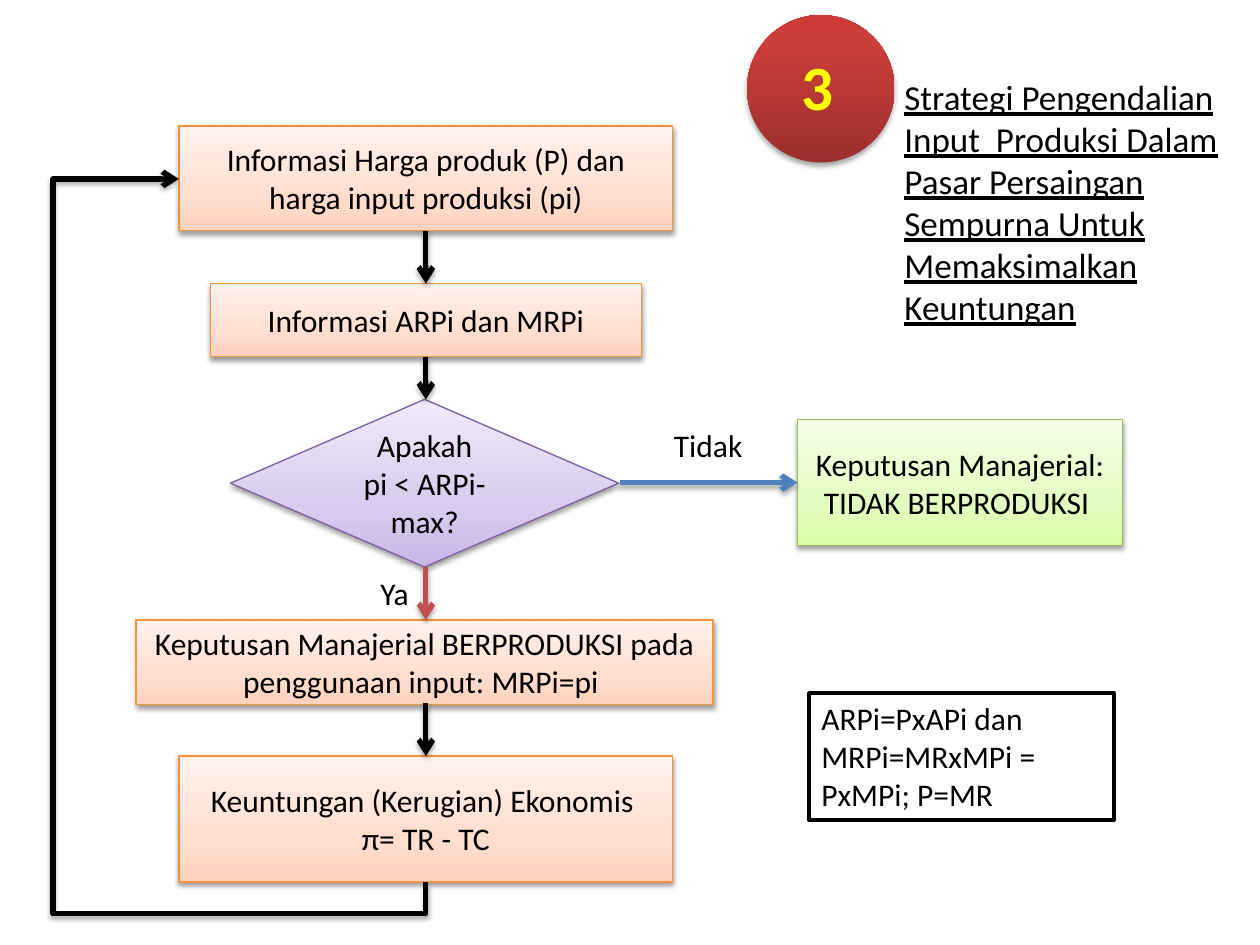
"""Build the flowchart slide on controlling production inputs to maximise profit."""
import copy

import lxml.etree
import pptx
import pptx.dml.color
import pptx.enum.shapes
import pptx.enum.text
import pptx.oxml.ns
import pptx.util

Inches = pptx.util.Inches
Pt = pptx.util.Pt
RGBColor = pptx.dml.color.RGBColor
Shape = pptx.enum.shapes.MSO_SHAPE
Connector = pptx.enum.shapes.MSO_CONNECTOR
Align = pptx.enum.text.PP_ALIGN
Anchor = pptx.enum.text.MSO_ANCHOR
qn = pptx.oxml.ns.qn

BLACK = RGBColor(0x00, 0x00, 0x00)
WHITE = RGBColor(0xFF, 0xFF, 0xFF)
YELLOW = RGBColor(0xFF, 0xFF, 0x00)
GOLD = RGBColor(0xFF, 0xC0, 0x00)
RED = RGBColor(0xC0, 0x50, 0x4D)
BLUE = RGBColor(0x4F, 0x81, 0xBD)
ORANGE = RGBColor(0xF6, 0x92, 0x40)
PURPLE = RGBColor(0x7D, 0x60, 0xA0)
GREEN = RGBColor(0x98, 0xB9, 0x55)
PEACH_SHADES = (RGBColor(0xFF, 0xD2, 0xBD), RGBColor(0xFF, 0xDE, 0xD0), RGBColor(0xFF, 0xF2, 0xED))
LILAC_SHADES = (RGBColor(0xC9, 0xB5, 0xE8), RGBColor(0xD8, 0xCB, 0xEE), RGBColor(0xF0, 0xEA, 0xF9))
LIME_SHADES = (RGBColor(0xDA, 0xFD, 0xA7), RGBColor(0xE4, 0xFC, 0xC2), RGBColor(0xF5, 0xFF, 0xE7))
RED_SHADES = (RGBColor(0x9C, 0x2F, 0x2D), RGBColor(0xCB, 0x3E, 0x3A), RGBColor(0xCE, 0x3B, 0x37))


class FlowPage:
    """Draws flowchart elements in one style on the current slide."""

    font = "Calibri"
    size = 18

    def __init__(self, page):
        self.page = page

    def put_text(self, shape, text, size=None, color=BLACK, align=Align.LEFT, wrap=True):
        """Put text in a shape and return its runs."""
        frame = shape.text_frame
        frame.text = text
        frame.word_wrap = wrap
        spans = []
        for para in frame.paragraphs:
            para.alignment = align
            spans.extend(para.runs)
        for span in spans:
            span.font.name = self.font
            span.font.size = Pt(size or self.size)
            span.font.color.rgb = color
        return spans

    def shadow(self, element, opacity, blur=3.1, distance=1.8):
        """Give a shape or connector a soft shadow straight below it."""
        properties = element.spPr
        effects = properties.find(qn("a:effectLst"))
        if effects is None:
            effects = lxml.etree.SubElement(properties, qn("a:effectLst"))
        outer = lxml.etree.SubElement(
            effects, qn("a:outerShdw"), blurRad=str(Pt(blur)), dist=str(Pt(distance)),
            dir="5400000", rotWithShape="0")
        tint = lxml.etree.SubElement(outer, qn("a:srgbClr"), val=str(BLACK))
        lxml.etree.SubElement(tint, qn("a:alpha"), val=str(opacity * 1000))

    def shade(self, shape, shades, middle):
        """Fill a shape with three shades from bottom to top."""
        fill = shape.fill
        fill.gradient()
        fill.gradient_angle = 90
        stops = shape.element.spPr.find(".//" + qn("a:gsLst"))
        stops.append(copy.deepcopy(stops[-1]))
        for stop, color, position in zip(fill.gradient_stops, shades, (0, middle, 1)):
            stop.color.rgb = color
            stop.position = position

    def node(self, left, top, width, height, text, shades=PEACH_SHADES, outline=ORANGE,
             kind=Shape.RECTANGLE):
        """Add a flowchart step."""
        shape = self.page.shapes.add_shape(
            kind, Inches(left), Inches(top), Inches(width), Inches(height))
        self.shade(shape, shades, 0.35)
        shape.line.color.rgb = outline
        shape.line.width = Pt(0.75)
        shape.shadow.inherit = False
        self.shadow(shape.element, 38, distance=1.6)
        shape.text_frame.vertical_anchor = Anchor.MIDDLE
        self.put_text(shape, text, align=Align.CENTER)

    def disc(self, left, top, diameter):
        """Add the shaded disc behind the number."""
        shape = self.page.shapes.add_shape(
            Shape.OVAL, Inches(left), Inches(top), Inches(diameter), Inches(diameter))
        self.shade(shape, RED_SHADES, 0.8)
        shape.line.fill.background()
        shape.shadow.inherit = False
        self.shadow(shape.element, 35)

    def label(self, left, top, width, height, text, **style):
        """Add a text box and return it with its runs."""
        box = self.page.shapes.add_textbox(
            Inches(left), Inches(top), Inches(width), Inches(height))
        spans = self.put_text(box, text, **style)
        box.text_frame.auto_size = pptx.enum.text.MSO_AUTO_SIZE.SHAPE_TO_FIT_TEXT
        return box, spans

    def arrow(self, start, end, color=BLACK, kind=Connector.STRAIGHT):
        """Add an arrow between two points."""
        link = self.page.shapes.add_connector(kind, *(Inches(value) for value in start + end))
        link.line.color.rgb = color
        link.line.width = Pt(3)
        stroke = link.element.spPr.find(qn("a:ln"))
        lxml.etree.SubElement(stroke, qn("a:tailEnd"), type="arrow")
        self.shadow(link.element, 35)
        return link

    def loop(self, start, end, bottom, side):
        """Add an arrow that runs below start, along a side and back to end."""
        (x1, y1), (x2, y2) = start, end
        middle_x, middle_y = (x1 + x2) / 2, (y1 + y2) / 2
        long, short = (y1 - y2) / 2, (x1 - x2) / 2
        link = self.arrow((middle_x + long, middle_y - short),
                          (middle_x - long, middle_y + short), kind=Connector.ELBOW)
        properties = link.element.spPr
        properties.find(qn("a:xfrm")).set("rot", "5400000")
        geometry = properties.find(qn("a:prstGeom"))
        geometry.set("prst", "bentConnector4")
        guides = geometry.find(qn("a:avLst"))
        if guides is None:
            guides = lxml.etree.SubElement(geometry, qn("a:avLst"))
        bends = ((y1 - bottom) / (y1 - y2), (x1 - side) / (x1 - x2))
        for number, bend in enumerate(bends, 1):
            lxml.etree.SubElement(guides, qn("a:gd"), name=f"adj{number}",
                                  fmla=f"val {round(bend * 100000)}")


def main():
    """Build and save the slide."""
    deck = pptx.Presentation()
    deck.slide_width, deck.slide_height = Inches(10), Inches(7.5)
    flow = FlowPage(deck.slides.add_slide(deck.slide_layouts[6]))

    flow.disc(5.93, 0.12, 1.17)
    title, spans = flow.label(
        7.08, 0.55, 2.76, 2.12, "Strategi Pengendalian Input  Produksi Dalam Pasar "
        "Persaingan Sempurna Untuk Memaksimalkan Keuntungan", size=20)
    spans[0].font.underline = True

    flow.node(1.42, 1, 3.92, 0.83, "Informasi Harga produk (P) dan harga input produksi (pi)")
    flow.node(1.67, 2.25, 3.42, 0.58, "Informasi ARPi dan MRPi")
    flow.node(1.83, 3.17, 3.08, 1.33, "Apakah\npi < ARPi-max?",
              LILAC_SHADES, PURPLE, Shape.DIAMOND)
    flow.node(1.08, 4.92, 4.58, 0.67,
              "Keputusan Manajerial BERPRODUKSI pada penggunaan input: MRPi=pi ")
    flow.node(1.42, 6, 3.92, 1, "Keuntungan (Kerugian) Ekonomis \nπ= TR - TC")
    flow.node(6.33, 3.33, 2.58, 1, "Keputusan Manajerial:\nTIDAK BERPRODUKSI ",
              LIME_SHADES, GREEN)

    flow.label(5.25, 3.33, 0.83, 0.4, "Tidak")
    flow.label(2.92, 4.51, 0.5, 0.4, "Ya")
    formula, spans = flow.label(6.42, 5.5, 2.42, 1.01,
                                "ARPi=PxAPi dan MRPi=MRxMPi = PxMPi; P=MR")
    formula.fill.solid()
    formula.fill.fore_color.rgb = WHITE
    formula.line.color.rgb = BLACK
    formula.line.width = Pt(2)

    axis = 3.38
    for top, bottom, color in ((1.83, 2.25, BLACK), (2.83, 3.17, BLACK),
                               (4.5, 4.92, RED), (5.58, 6, BLACK)):
        flow.arrow((axis, top), (axis, bottom), color)
    flow.arrow((4.92, 3.83), (6.33, 3.83), BLUE)
    flow.loop((axis, 7), (1.42, 1.42), bottom=7.25, side=0.42)

    number, spans = flow.label(6.26, 0.33, 0.46, 0.71, "3", size=36, color=YELLOW, wrap=False)
    spans[0].font.bold = True
    properties = number.element.find(".//" + qn("a:rPr"))
    properties.set("spc", "50")
    outline = lxml.etree.Element(qn("a:ln"), w=str(Pt(0.9)))
    paint = lxml.etree.SubElement(outline, qn("a:solidFill"))
    lxml.etree.SubElement(paint, qn("a:srgbClr"), val=str(GOLD))
    properties.insert(0, outline)

    deck.save("out.pptx")


if __name__ == "__main__":
    main()
